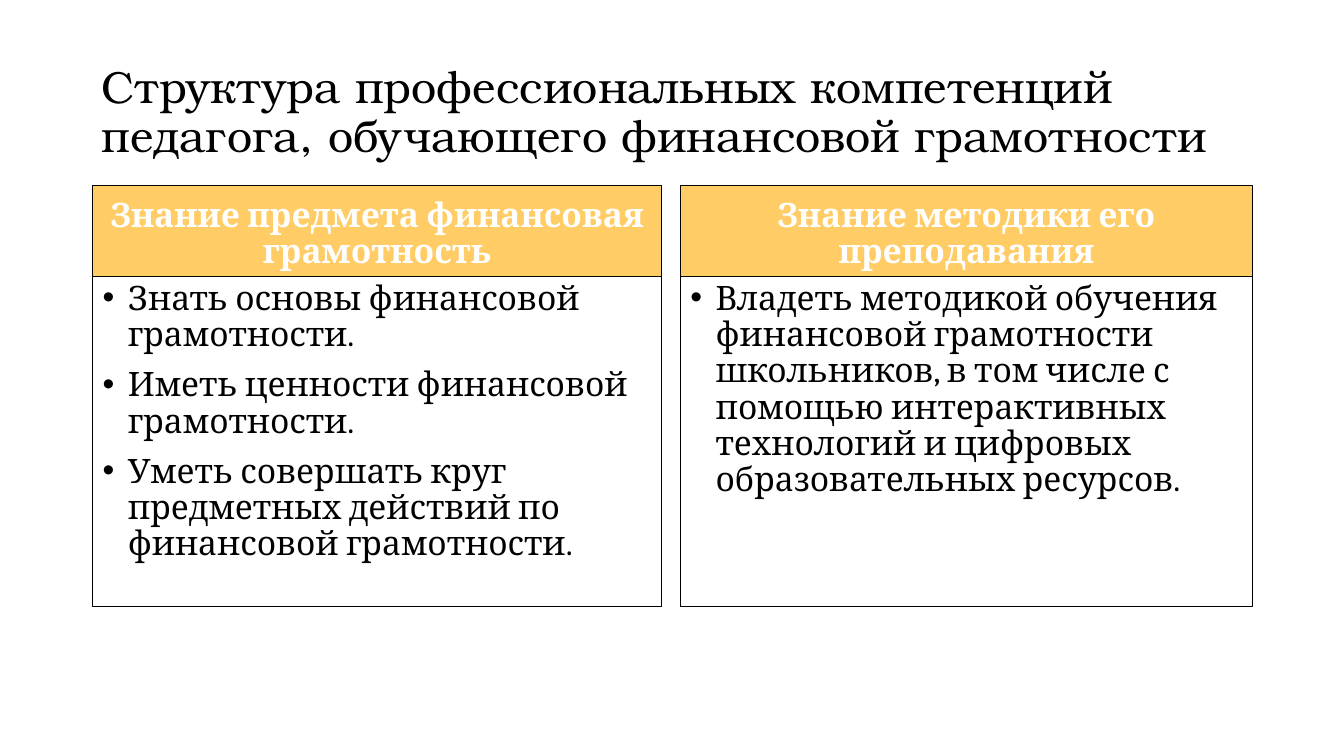
import pptx
import pptx.dml.color
import pptx.enum.shapes
import pptx.enum.text
import pptx.util
from lxml import etree

WIDTH, HEIGHT = 13.33, 7.5
COLOURS = {"ink": "000000", "paper": "FFFFFF", "header": "FFCC66"}
ALIGN = pptx.enum.text.PP_ALIGN
ANCHOR = pptx.enum.text.MSO_ANCHOR
ROWS = {"header": (1.84, 0.9), "body": (2.74, 3.28)}
TITLE = "Структура профессиональных компетенций педагога, обучающего финансовой грамотности"
COLUMNS = [
    (0.92, 5.64, "Знание предмета финансовая грамотность", [
        "Знать основы финансовой грамотности.",
        "Иметь ценности финансовой грамотности.",
        "Уметь совершать круг предметных действий по финансовой грамотности.",
    ]),
    (6.75, 5.67, "Знание методики его преподавания", [
        "Владеть методикой обучения финансовой грамотности школьников, в том числе "
        "с помощью интерактивных технологий и цифровых образовательных ресурсов.",
    ]),
]
TITLE_FONT = {"name": "TeX Gyre Bonum", "size": pptx.util.Pt(32), "bold": False}
HEADER_FONT = {"name": "Cambria", "size": pptx.util.Pt(24), "bold": True}
BODY_FONT = {**HEADER_FONT, "bold": False}
TITLE_PARAGRAPH = {"alignment": ALIGN.LEFT, "line_spacing": 0.9}
BODY_PARAGRAPH = {**TITLE_PARAGRAPH, "space_before": pptx.util.Pt(10)}
HEADER_PARAGRAPH = {**BODY_PARAGRAPH, "alignment": ALIGN.CENTER}


def colour(name):
    """Return the named colour of the palette."""
    return pptx.dml.color.RGBColor.from_string(COLOURS[name])


def apply_format(target, values):
    """Set every attribute in values on the target."""
    for name, value in values.items():
        setattr(target, name, value)


def write_text(shape, texts, anchor, paragraph_format, font_format, font_colour):
    """Fill a shape with formatted paragraphs and return them."""
    frame = shape.text_frame
    frame.text = "\n".join(texts)
    apply_format(frame, {"word_wrap": True, "vertical_anchor": anchor,
                         "auto_size": pptx.enum.text.MSO_AUTO_SIZE.NONE})
    for paragraph in frame.paragraphs:
        apply_format(paragraph, paragraph_format)
        font = paragraph.runs[0].font
        apply_format(font, font_format)
        font.color.rgb = colour(font_colour)
    return frame.paragraphs


def add_bullet(paragraph):
    """Give a paragraph a bullet with a hanging indent."""
    properties = paragraph._p.get_or_add_pPr()
    indent = pptx.util.Inches(0.25)
    properties.set("marL", str(indent))
    properties.set("indent", str(-indent))
    for tag, key, value in (("a:buFont", "typeface", "Arial"), ("a:buChar", "char", "•")):
        etree.SubElement(properties, pptx.oxml.ns.qn(tag)).set(key, value)


def add_box(slide, left, width, row):
    """Add an outlined, unfilled rectangle in the given row."""
    top, height = ROWS[row]
    shape = slide.shapes.add_shape(
        pptx.enum.shapes.MSO_SHAPE.RECTANGLE,
        *map(pptx.util.Inches, (left, top, width, height)))
    shape.shadow.inherit = False
    shape.fill.background()
    shape.line.color.rgb = colour("ink")
    shape.line.width = pptx.util.Pt(0.75)
    return shape


def add_column(slide, left, width, heading, items):
    """Add a heading box with a bulleted box beneath it."""
    header = add_box(slide, left, width, "header")
    header.fill.solid()
    header.fill.fore_color.rgb = colour("header")
    write_text(header, [heading], ANCHOR.BOTTOM, HEADER_PARAGRAPH, HEADER_FONT, "paper")
    body = add_box(slide, left, width, "body")
    for paragraph in write_text(body, items, ANCHOR.TOP, BODY_PARAGRAPH, BODY_FONT, "ink"):
        add_bullet(paragraph)


def place_title(slide):
    """Position and format the title placeholder."""
    title = slide.shapes.title
    lengths = zip(("left", "top", "width", "height"), (0.91, 0.4, 11.5, 1.45))
    apply_format(title, {name: pptx.util.Inches(value) for name, value in lengths})
    write_text(title, [TITLE], ANCHOR.MIDDLE, TITLE_PARAGRAPH, TITLE_FONT, "ink")


def main():
    """Build and save the slide."""
    presentation = pptx.Presentation()
    presentation.slide_width = pptx.util.Inches(WIDTH)
    presentation.slide_height = pptx.util.Inches(HEIGHT)
    slide = presentation.slides.add_slide(presentation.slide_layouts.get_by_name("Title Only"))
    place_title(slide)
    for column in COLUMNS:
        add_column(slide, *column)
    presentation.save("out.pptx")


if __name__ == "__main__":
    main()
